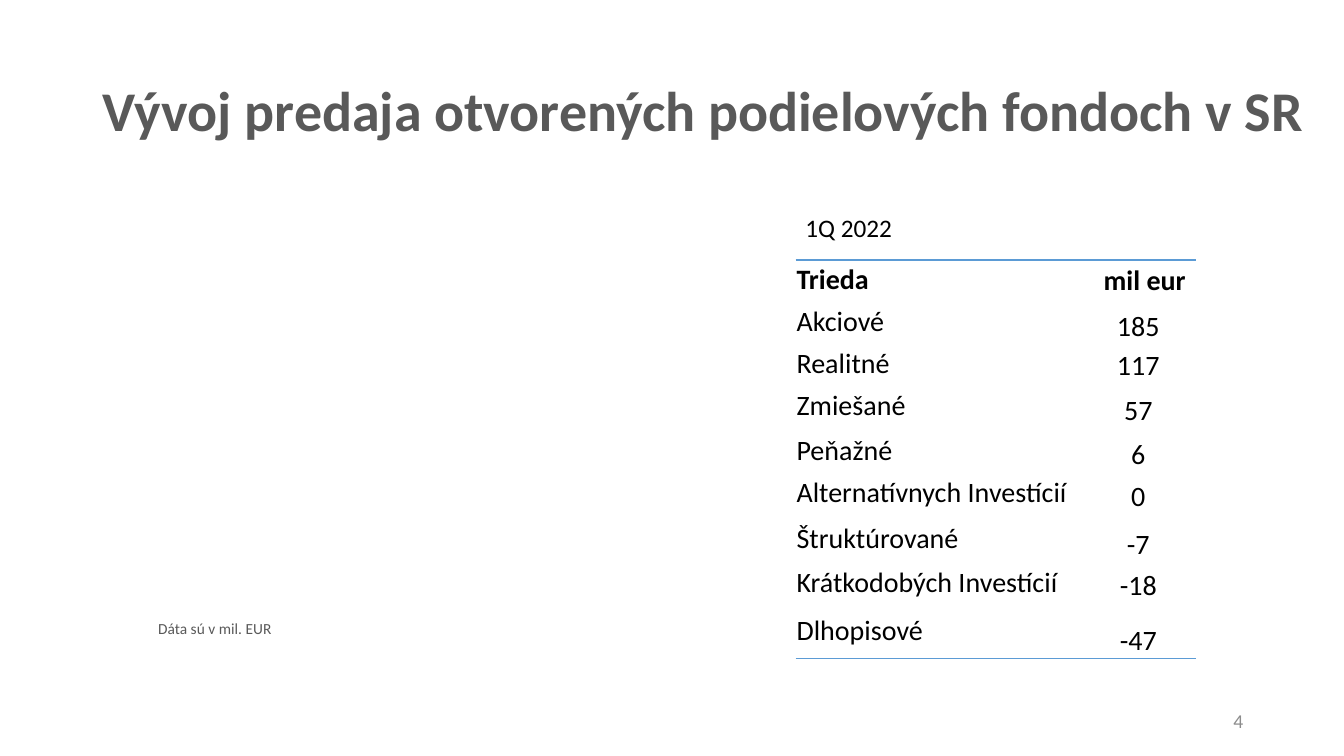
"""Build the slide on sales of open-ended mutual funds in Slovakia."""
from lxml import etree
from pptx import Presentation
from pptx import util as u
from pptx.dml.color import RGBColor
from pptx.enum import text
from pptx.oxml import ns

BLACK = RGBColor(0x00, 0x00, 0x00)
DARK_GREY = RGBColor(0x59, 0x59, 0x59)
LIGHT_GREY = RGBColor(0x8C, 0x8C, 0x8C)
BLUE = RGBColor(0x5B, 0x9B, 0xD5)
FONT = "Calibri"
WIDTH, HEIGHT = 13.33, 7.5
LEFT, CENTER, RIGHT = text.PP_ALIGN.LEFT, text.PP_ALIGN.CENTER, text.PP_ALIGN.RIGHT
TOP, MIDDLE, BOTTOM = text.MSO_ANCHOR.TOP, text.MSO_ANCHOR.MIDDLE, text.MSO_ANCHOR.BOTTOM
NO_STYLE = "{2D5ABB26-0587-4C30-8999-92F81FD0307C}"

TABLE_LEFT, TABLE_TOP = 7.89, 2.58
COLUMN_WIDTHS = (2.83, 1.14)
ROW_HEIGHTS = (0.38, 0.45, 0.39, 0.45, 0.43, 0.42, 0.48, 0.4, 0.55)
FUND_SALES = (
    ("Trieda", "mil eur"),
    ("Akciové", "185"),
    ("Realitné", "117"),
    ("Zmiešané", "57"),
    ("Peňažné", "6"),
    ("Alternatívnych Investícií", "0"),
    ("Štruktúrované", "-7"),
    ("Krátkodobých Investícií", "-18"),
    ("Dlhopisové", "-47"),
)
LABELS = (
    ("Vývoj predaja otvorených podielových fondoch v SR", (0.92, 0.4, 12.15, 1.45),
     {"size": u.Pt(40), "bold": True}, DARK_GREY,
     {"line_spacing": 0.9}, {"vertical_anchor": MIDDLE, "word_wrap": True}),
    ("4", (9.43, 6.95, 3, 0.4), {"size": u.Pt(14)}, LIGHT_GREY,
     {"alignment": RIGHT}, {"vertical_anchor": MIDDLE, "word_wrap": True}),
    ("Dáta sú v mil. EUR", (1.47, 6.09, 1.33, 0.29), {"size": u.Pt(11)}, DARK_GREY,
     {"alignment": LEFT}, {"vertical_anchor": TOP, "word_wrap": False}),
    ("1Q 2022", (TABLE_LEFT, 2.06, 3.37, 0.4), {"size": u.Pt(18)}, BLACK,
     {"alignment": LEFT}, {"vertical_anchor": TOP, "word_wrap": True}),
)


def apply(target, values):
    for name, value in values.items():
        setattr(target, name, value)


def write(paragraph, words, font, color, layout):
    run = paragraph.add_run()
    run.text = words
    apply(run.font, {"name": FONT, **font})
    run.font.color.rgb = color
    apply(paragraph, layout)


def add_label(slide, words, place, font, color, layout, frame):
    shape = slide.shapes.add_textbox(*map(u.Inches, place))
    apply(shape.text_frame, frame)
    write(shape.text_frame.paragraphs[0], words, font, color, layout)


def add_border(cell, side):
    line = etree.Element(ns.qn(f"a:{side}"), w=str(u.Pt(1)))
    fill = etree.SubElement(line, ns.qn("a:solidFill"))
    etree.SubElement(fill, ns.qn("a:srgbClr"), val=str(BLUE))
    cell._tc.get_or_add_tcPr().insert(0, line)


def add_sales_table(slide):
    place = (TABLE_LEFT, TABLE_TOP, sum(COLUMN_WIDTHS), sum(ROW_HEIGHTS))
    frame = slide.shapes.add_table(len(FUND_SALES), len(COLUMN_WIDTHS), *map(u.Inches, place))
    table = frame.table
    apply(table, {"first_row": False, "horz_banding": False})
    table._tbl.tblPr.find(ns.qn("a:tableStyleId")).text = NO_STYLE
    for column, width in zip(table.columns, COLUMN_WIDTHS):
        column.width = u.Inches(width)
    last = len(FUND_SALES) - 1
    for index, (row, height) in enumerate(zip(table.rows, ROW_HEIGHTS)):
        row.height = u.Inches(height)
        header = index == 0
        for position, cell in enumerate(row.cells):
            value = position == 1
            apply(cell, {
                "margin_left": u.Inches(0.01), "margin_top": u.Inches(0.01),
                "margin_right": u.Inches(0.1 if header and value else 0.01),
                "margin_bottom": 0, "vertical_anchor": BOTTOM if value else MIDDLE,
            })
            cell.fill.background()
            alignment = (RIGHT if header else CENTER) if value else LEFT
            write(cell.text_frame.paragraphs[0], FUND_SALES[index][position],
                  {"size": u.Pt(20), "bold": header}, BLACK, {"alignment": alignment})
            if index in (0, last):
                add_border(cell, "lnT" if header else "lnB")


def main():
    presentation = Presentation()
    apply(presentation, {"slide_width": u.Inches(WIDTH), "slide_height": u.Inches(HEIGHT)})
    slide = presentation.slides.add_slide(presentation.slide_layouts[6])
    for label in LABELS:
        add_label(slide, *label)
    add_sales_table(slide)
    presentation.save("out.pptx")


if __name__ == "__main__":
    main()
